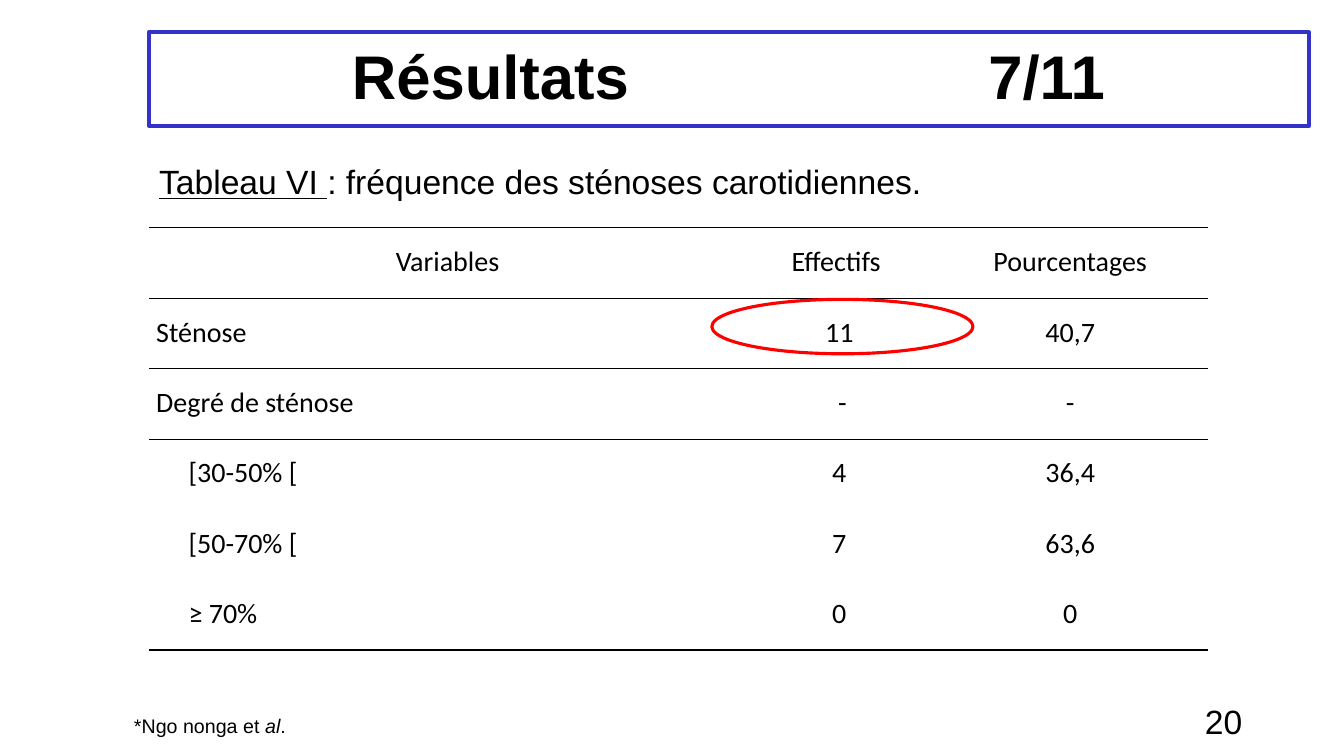
from lxml import etree
from pptx import Presentation
from pptx import util as u
from pptx.enum import shapes, text
from pptx.dml.color import RGBColor
from pptx.oxml.ns import qn

WIDTH, HEIGHT = 13.33, 7.5
LEFT, TABLE_WIDTH = 1.48, 10.49
COLORS = {"ink": "000000", "frame": "3333CC", "mark": "FF0000"}
PLAIN_TABLE = "{2D5ABB26-0587-4C30-8999-92F81FD0307C}"
ALIGN = text.PP_ALIGN
ROWS = [
    ("Variables", "Effectifs ", "Pourcentages"),
    ("Sténose ", "11", "40,7"),
    ("Degré de sténose ", " -", "-"),
    ("[30-50% [", "4", "36,4"),
    ("[50-70% [", "7", "63,6"),
    ("≥ 70%", "0", "0"),
]
FIRST_SUBROW = 3
COLUMN_WIDTHS = (5.92, 1.85, 2.73)
# Rule thickness in points above each row, then below the last one
RULES = {0: 1, 1: 0.5, 2: 0.5, len(ROWS): 1}


def inches(box):
    return [u.Inches(length) for length in box]


def color(name):
    return RGBColor.from_string(COLORS[name])


def add_span(para, words, size=24, font="Arial", bold=False, italic=False, underline=False):
    span = para.add_run()
    span.text = words
    style = span.font
    style.size, style.name = u.Pt(size), font
    style.bold, style.italic, style.underline = bold, italic, underline
    style.color.rgb = color("ink")
    return span


def add_text_box(page, box, anchor=text.MSO_ANCHOR.TOP):
    frame = page.shapes.add_textbox(*inches(box)).text_frame
    frame.word_wrap = True
    frame.vertical_anchor = anchor
    return frame.paragraphs[0]


def outline(shape, name, width):
    shape.line.color.rgb = color(name)
    shape.line.width = u.Pt(width)


def place_title(page, box):
    title = page.shapes.title
    title.left, title.top, title.width, title.height = inches(box)
    outline(title, "frame", 3)
    frame = title.text_frame
    frame.vertical_anchor = text.MSO_ANCHOR.MIDDLE
    para = frame.paragraphs[0]
    para.alignment, para.line_spacing = ALIGN.LEFT, 0.9
    add_span(para, "\tRésultats\t7/11", size=44, bold=True)
    # Tab stops set the heading and its counter apart
    stops = etree.SubElement(para._p.get_or_add_pPr(), qn("a:tabLst"))
    for share in (0.166, 0.715):
        etree.SubElement(stops, qn("a:tab"), pos=str(u.Inches(box[2] * share)), algn="l")


def add_rule(cell, side, width):
    properties = cell._tc.get_or_add_tcPr()
    line = etree.Element(qn(f"a:{side}"), w=str(u.Pt(width)))
    fill = etree.SubElement(line, qn("a:solidFill"))
    etree.SubElement(fill, qn("a:srgbClr"), val=COLORS["ink"])
    # Borders come before the fill, top before bottom
    position = len(properties.findall(qn("a:lnT")))
    properties.insert(position, line)


def fill_cell(cell, words, row, column):
    cell.margin_left = cell.margin_right = u.Inches(0.07)
    cell.margin_top = cell.margin_bottom = 0
    cell.fill.background()
    para = cell.text_frame.paragraphs[0]
    is_label = column == 0 and row > 0
    para.alignment = ALIGN.JUSTIFY if is_label else ALIGN.CENTER
    para.line_spacing = 1.5
    if is_label and row >= FIRST_SUBROW:
        para._p.get_or_add_pPr().set("marL", str(u.Inches(0.32)))
    add_span(para, words, size=20, font="Calibri")
    for side, edge in (("lnT", row), ("lnB", row + 1)):
        if edge in RULES:
            add_rule(cell, side, RULES[edge])


def place_table(page, box):
    holder = page.shapes.add_table(len(ROWS), len(COLUMN_WIDTHS), *inches(box))
    table = holder.table
    table.first_row = table.horz_banding = False
    table._tbl.tblPr.find(qn("a:tableStyleId")).text = PLAIN_TABLE
    for column, width in zip(table.columns, COLUMN_WIDTHS):
        column.width = u.Inches(width)
    for row, values in enumerate(ROWS):
        table.rows[row].height = u.Inches(box[3] / len(ROWS))
        for column, words in enumerate(values):
            fill_cell(table.cell(row, column), words, row, column)


def place_caption(page, box):
    para = add_text_box(page, box)
    add_span(para, "Tableau VI ", underline=True)
    add_span(para, ": fréquence des sténoses carotidiennes.")


def place_page_number(page, box):
    para = add_text_box(page, box, anchor=text.MSO_ANCHOR.MIDDLE)
    para.alignment = ALIGN.RIGHT
    add_span(para, "20")


def place_mark(page, box):
    ring = page.shapes.add_shape(shapes.MSO_SHAPE.OVAL, *inches(box))
    ring.shadow.inherit = False
    ring.fill.background()
    outline(ring, "mark", 2.25)


def place_source(page, box):
    para = add_text_box(page, box)
    para.line_spacing = u.Pt(13)
    para.space_before, para.space_after = u.Pt(10), u.Pt(6)
    add_span(para, "*Ngo nonga et ", size=14)
    add_span(para, "al", size=14, italic=True)
    add_span(para, ".", size=14)


def main():
    deck = Presentation()
    deck.slide_width, deck.slide_height = u.Inches(WIDTH), u.Inches(HEIGHT)
    page = deck.slides.add_slide(deck.slide_layouts[5])
    place_title(page, (LEFT, 0.32, 11.5, 0.93))
    place_table(page, (LEFT, 2.26, TABLE_WIDTH, 4.19))
    place_caption(page, (LEFT, 1.55, TABLE_WIDTH, 0.5))
    place_page_number(page, (9.42, 6.95, 3, 0.4))
    place_mark(page, (7.06, 2.97, 2.59, 0.54))
    place_source(page, (1.23, 7.09, 10.52, 0.28))
    deck.save("out.pptx")


if __name__ == "__main__":
    main()
